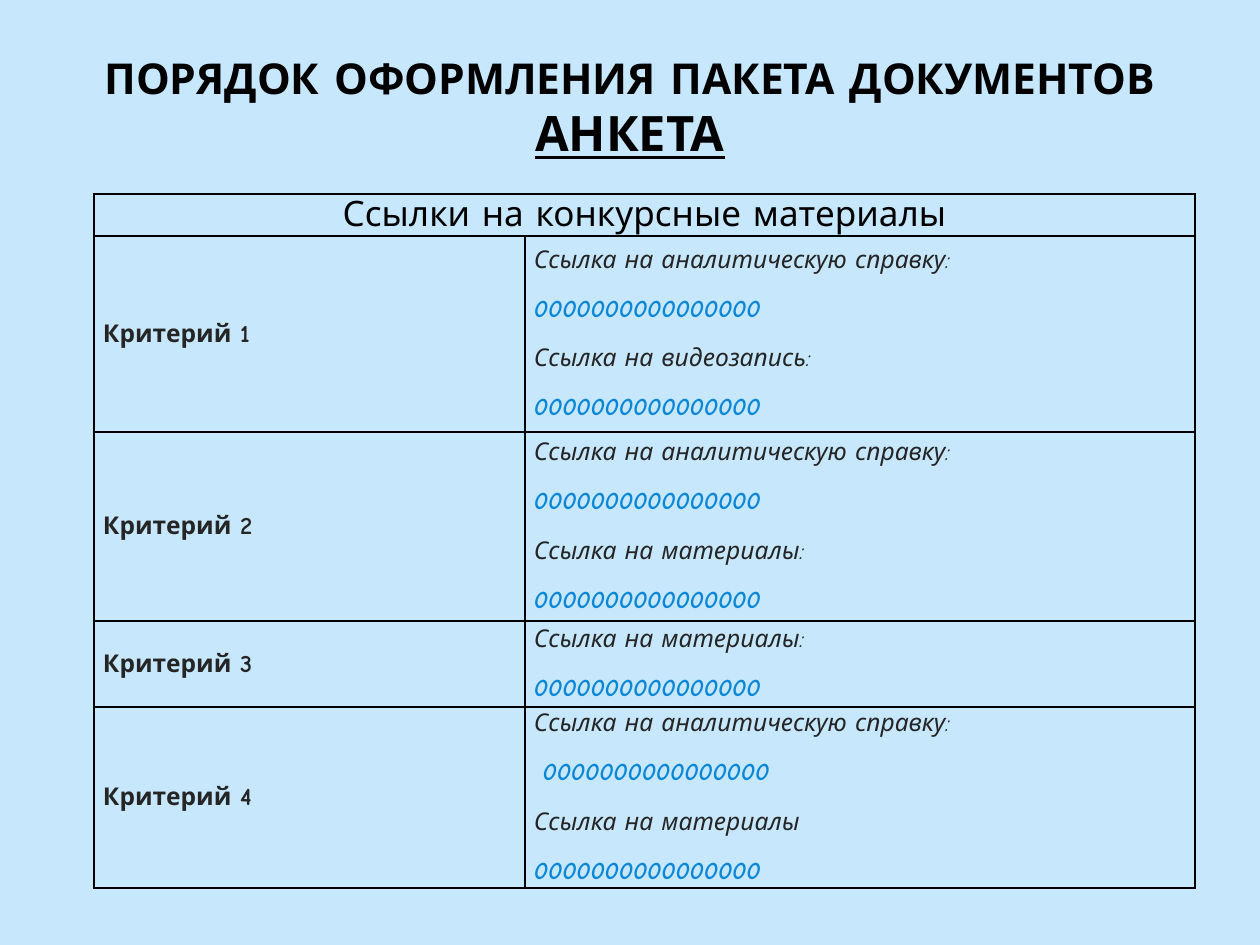
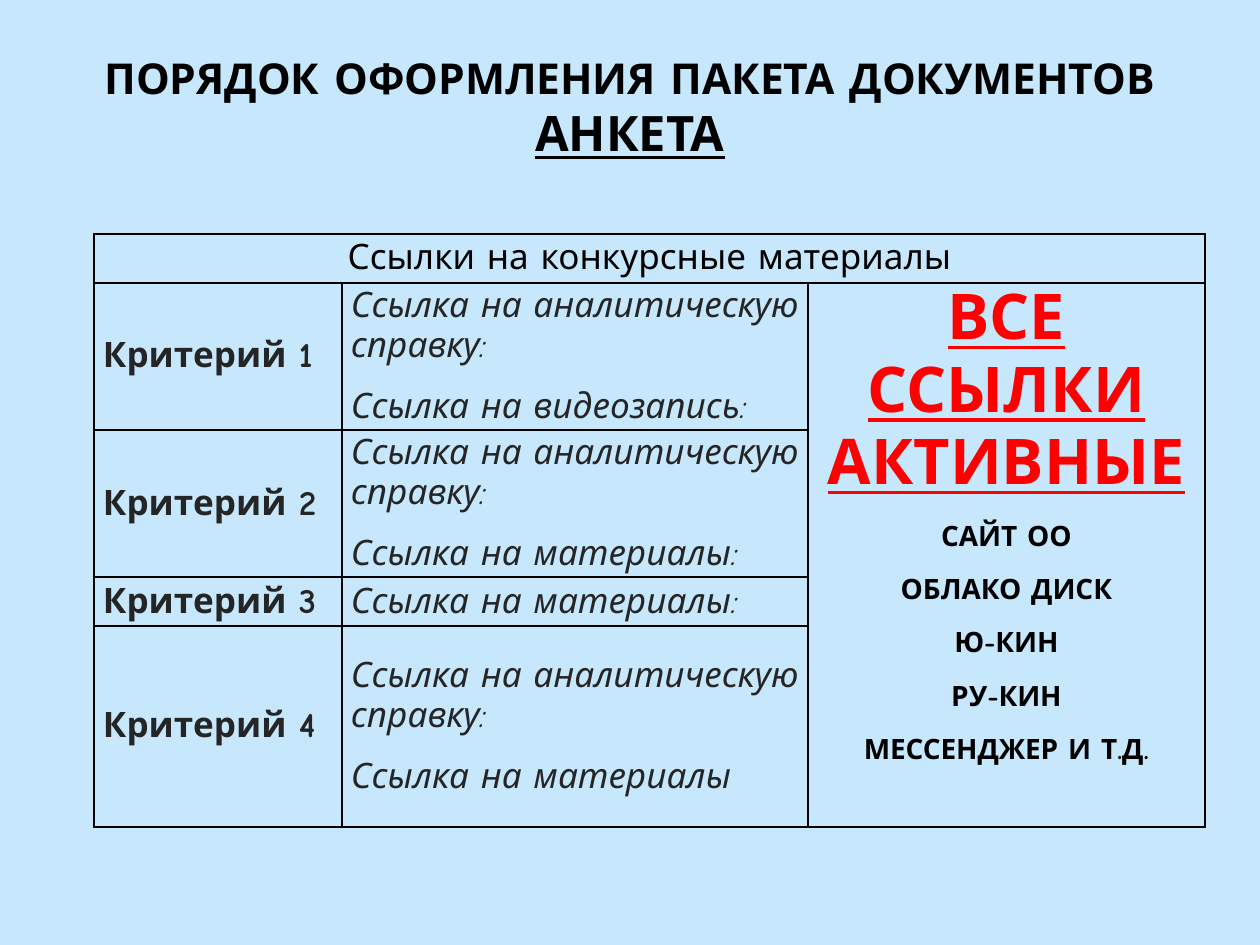
from lxml.etree import SubElement
from pptx import Presentation
from pptx.dml.color import RGBColor
from pptx.enum.text import MSO_ANCHOR as ANCHOR, PP_ALIGN as ALIGN
from pptx.oxml.ns import qn
from pptx.util import Emu, Pt

# Shared style
PX = 914400 / 126
FONT = "Comic Neue"
BACK, BLACK, DARK, BLUE, RED = "C6E7FC", "000000", "252525", "0B87D6", "FF0000"

# Shared wording
REPORT = "Ссылка на аналитическую справку:"
VIDEO = "Ссылка на видеозапись:"
FILES = "Ссылка на материалы:"
FILES_BARE = "Ссылка на материалы"
ADDRESS = "0000000000000000"
LINKS = [[REPORT, VIDEO], [REPORT, FILES], [FILES], [REPORT, FILES_BARE]]
HOSTS = ["САЙТ ОО", "ОБЛАКО ДИСК", "Ю-КИН", "РУ-КИН", "МЕССЕНДЖЕР И Т.Д."]


def px(n):
    return Emu(round(n * PX))


def rgb(code):
    return RGBColor.from_string(code)


class Deck:
    def __init__(self):
        self.prs = Presentation()
        self.prs.slide_width, self.prs.slide_height = px(1260), px(945)
        self.s = None

    def slide(self):
        self.s = self.prs.slides.add_slide(self.prs.slide_layouts[6])
        fill = self.s.background.fill
        fill.solid()
        fill.fore_color.rgb = rgb(BACK)

    def paragraph(self, tf, text, size, color=BLACK, bold=False, italic=False,
                  underline=False, align=ALIGN.LEFT, gap=0):
        # The first paragraph already exists in an empty frame
        p = tf.paragraphs[0]
        if p.runs:
            p = tf.add_paragraph()
        p.alignment = align
        p.space_before = p.space_after = Pt(gap)
        r = p.add_run()
        r.text = text
        f = r.font
        f.name, f.size, f.color.rgb = FONT, Pt(size), rgb(color)
        f.bold, f.italic, f.underline = bold, italic, underline

    def title(self):
        tf = self.s.shapes.add_textbox(px(63), px(38), px(1134), px(137)).text_frame
        tf.word_wrap = True
        tf.vertical_anchor = ANCHOR.MIDDLE
        self.paragraph(tf, "ПОРЯДОК ОФОРМЛЕНИЯ ПАКЕТА ДОКУМЕНТОВ", 24.3,
                       bold=True, align=ALIGN.CENTER)
        self.paragraph(tf, "АНКЕТА", 27.9, bold=True, underline=True,
                       align=ALIGN.CENTER)

    def border(self, cell):
        pr = cell._tc.get_or_add_tcPr()
        for i, side in enumerate(("a:lnL", "a:lnR", "a:lnT", "a:lnB")):
            ln = pr.makeelement(qn(side), {"w": str(Pt(1))})
            SubElement(SubElement(ln, qn("a:solidFill")), qn("a:srgbClr"), val=BLACK)
            pr.insert(i, ln)

    def table(self, top, widths, heights):
        frame = self.s.shapes.add_table(len(heights), len(widths), px(94), px(top),
                                        px(sum(widths)), px(sum(heights)))
        table = frame.table
        table.first_row = table.horz_banding = False
        for column, width in zip(table.columns, widths):
            column.width = px(width)
        for row, height in zip(table.rows, heights):
            row.height = px(height)
        for cell in table.iter_cells():
            cell.fill.background()
            cell.vertical_anchor = ANCHOR.MIDDLE
            cell.margin_left = cell.margin_right = px(9)
            cell.margin_top = cell.margin_bottom = 0
            self.border(cell)
        # Heading across all columns
        head = table.cell(0, 0)
        head.merge(table.cell(0, len(widths) - 1))
        self.paragraph(head.text_frame, "Ссылки на конкурсные материалы", 20,
                       align=ALIGN.CENTER)
        return table

    def criteria(self, table, size, addresses=False):
        for n, links in enumerate(LINKS, 1):
            self.paragraph(table.cell(n, 0).text_frame, f"Критерий {n}", size,
                           DARK, bold=True, gap=6)
            tf = table.cell(n, 1).text_frame
            for i, link in enumerate(links):
                self.paragraph(tf, link, size, DARK, italic=True, gap=6)
                if addresses:
                    lead = " " if n == 4 and i == 0 else ""
                    self.paragraph(tf, lead + ADDRESS, size, BLUE, bold=True,
                                   italic=True, gap=6)


def main():
    deck = Deck()

    # Slide 1: links with sample addresses
    deck.slide()
    deck.title()
    table = deck.table(194, [431, 670], [42, 196, 189, 86, 175])
    deck.criteria(table, 14, addresses=True)

    # Slide 2: links with the list of hosts
    deck.slide()
    deck.title()
    table = deck.table(234, [248, 466, 397], [49, 142, 142, 49, 201])
    deck.criteria(table, 20)
    note = table.cell(1, 2)
    note.merge(table.cell(4, 2))
    note.vertical_anchor = ANCHOR.TOP
    deck.paragraph(note.text_frame, "ВСЕ ССЫЛКИ АКТИВНЫЕ", 36, RED, bold=True,
                   underline=True, align=ALIGN.CENTER, gap=6)
    for host in HOSTS:
        deck.paragraph(note.text_frame, host, 16, bold=True, align=ALIGN.CENTER, gap=6)

    deck.prs.save("out.pptx")


if __name__ == "__main__":
    main()
